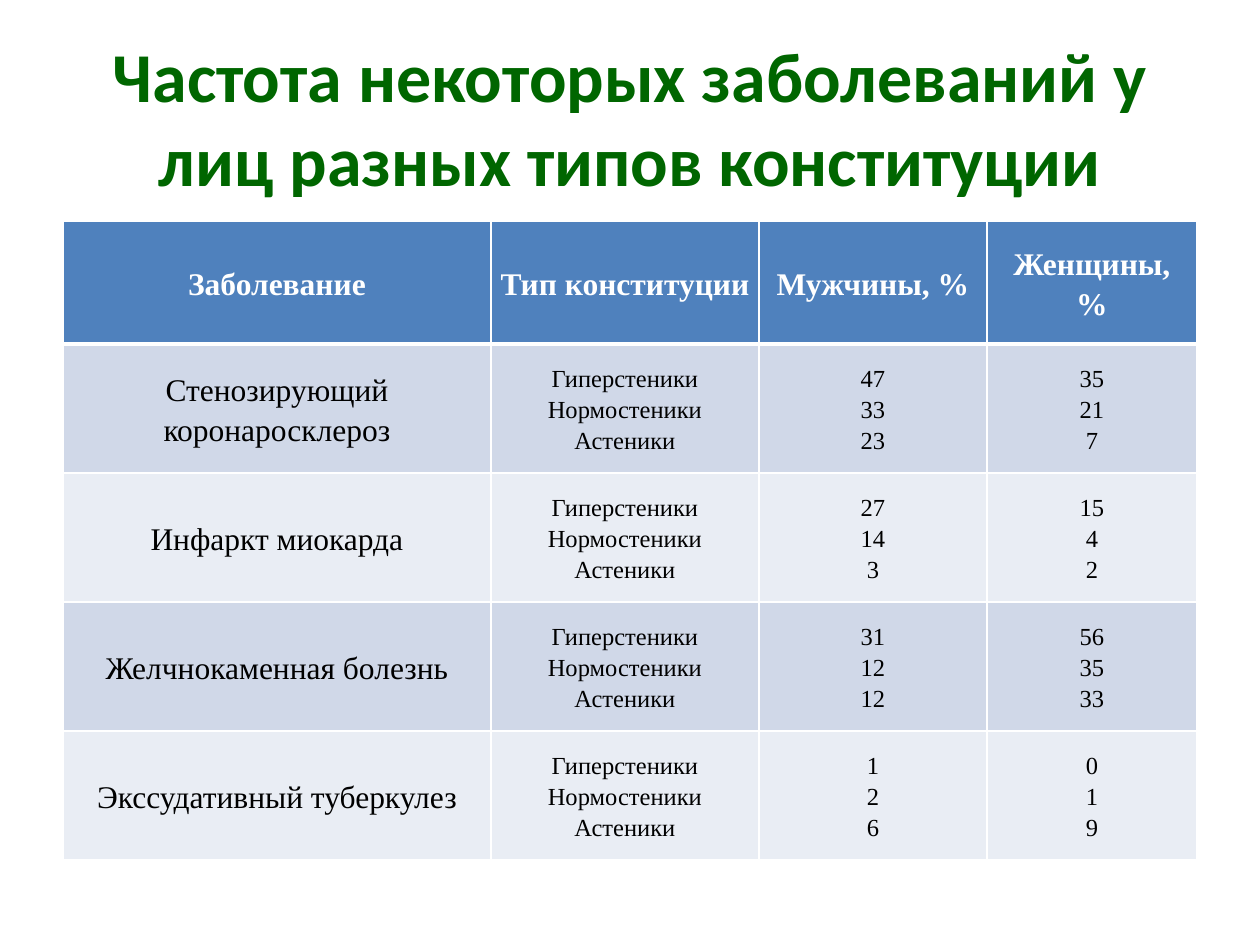
from lxml import etree
from pptx import Presentation, util as u
from pptx.dml.color import RGBColor
from pptx.enum import text
from pptx.oxml.ns import qn

TITLE = "Частота некоторых заболеваний у лиц разных типов конституции"
HEADERS = ["Заболевание", "Тип конституции", "Мужчины, %", "Женщины, %"]
TYPES = ["Гиперстеники", "Нормостеники", "Астеники"]
DISEASES = [  # name, men, women
    ("Стенозирующий коронаросклероз", [47, 33, 23], [35, 21, 7]),
    ("Инфаркт миокарда", [27, 14, 3], [15, 4, 2]),
    ("Желчнокаменная болезнь", [31, 12, 12], [56, 35, 33]),
    ("Экссудативный туберкулез", [1, 2, 6], [0, 1, 9]),
]

GREEN = RGBColor(0x00, 0x66, 0x00)
BLUE = RGBColor(0x4F, 0x81, 0xBD)
BANDS = [RGBColor(0xD0, 0xD8, 0xE8), RGBColor(0xE9, 0xED, 0xF4)]
BLACK = RGBColor(0, 0, 0)
WHITE = RGBColor(0xFF, 0xFF, 0xFF)

PX = u.Inches(1) / 126
LEFT, WIDTH = 63, 1134
TITLE_TOP, TITLE_HEIGHT = 38, 158
TABLE_TOP = 221
COLUMNS = [428, 268, 228, 210]
ROWS = [123] + [129] * len(DISEASES)


def px(value):
    return u.Emu(round(value * PX))


def set_font(font, name, size, color, bold):
    values = dict(name=name, size=u.Pt(size), bold=bold)
    for key, value in values.items():
        setattr(font, key, value)
    font.color.rgb = color


def add_borders(cell, widths):
    """Draw white borders; widths maps a side tag to points."""
    properties = cell._tc.get_or_add_tcPr()
    for side, width in widths.items():
        line = etree.SubElement(properties, qn(f"a:{side}"), w=str(u.Pt(width)))
        fill = etree.SubElement(line, qn("a:solidFill"))
        etree.SubElement(fill, qn("a:srgbClr"), val=str(WHITE))


def fill_cell(cell, lines, size, color, bold, background, borders):
    add_borders(cell, borders)
    cell.fill.solid()
    cell.fill.fore_color.rgb = background
    layout = dict(margin_left=px(9), margin_right=px(9), margin_top=0,
                  margin_bottom=0, vertical_anchor=text.MSO_ANCHOR.MIDDLE)
    for key, value in layout.items():
        setattr(cell, key, value)
    cell.text = "\n".join(map(str, lines))
    for para in cell.text_frame.paragraphs:
        para.alignment = text.PP_ALIGN.CENTER
        para.line_spacing = 1.15
        set_font(para.runs[0].font, "Times New Roman", size, color, bold)


def add_title(page):
    box = page.shapes.title
    box.left, box.top = px(LEFT), px(TITLE_TOP)
    box.width, box.height = px(WIDTH), px(TITLE_HEIGHT)
    box.text_frame.text = TITLE
    box.text_frame.vertical_anchor = text.MSO_ANCHOR.MIDDLE
    para = box.text_frame.paragraphs[0]
    para.alignment = text.PP_ALIGN.CENTER
    set_font(para.runs[0].font, "Calibri", 40, GREEN, True)


def add_disease_table(page):
    table = page.shapes.add_table(
        len(ROWS), len(COLUMNS), px(LEFT), px(TABLE_TOP),
        px(WIDTH), px(sum(ROWS))).table
    for column, width in zip(table.columns, COLUMNS):
        column.width = px(width)
    for row, height in zip(table.rows, ROWS):
        row.height = px(height)

    content = [[[header] for header in HEADERS]]
    content += [[[name], TYPES, men, women] for name, men, women in DISEASES]
    for r, row in enumerate(content):
        is_header = r == 0
        background = BLUE if is_header else BANDS[(r - 1) % 2]
        borders = dict(lnL=1, lnR=1, lnT=3 if r == 1 else 1,
                       lnB=3 if is_header else 1)
        for c, lines in enumerate(row):
            fill_cell(table.cell(r, c), lines,
                      18 if is_header or c == 0 else 14,
                      WHITE if is_header else BLACK,
                      is_header, background, borders)


def main():
    deck = Presentation()
    deck.slide_width, deck.slide_height = px(1260), px(945)
    page = deck.slides.add_slide(deck.slide_layouts[5])
    add_title(page)
    add_disease_table(page)
    deck.save("out.pptx")


if __name__ == "__main__":
    main()
